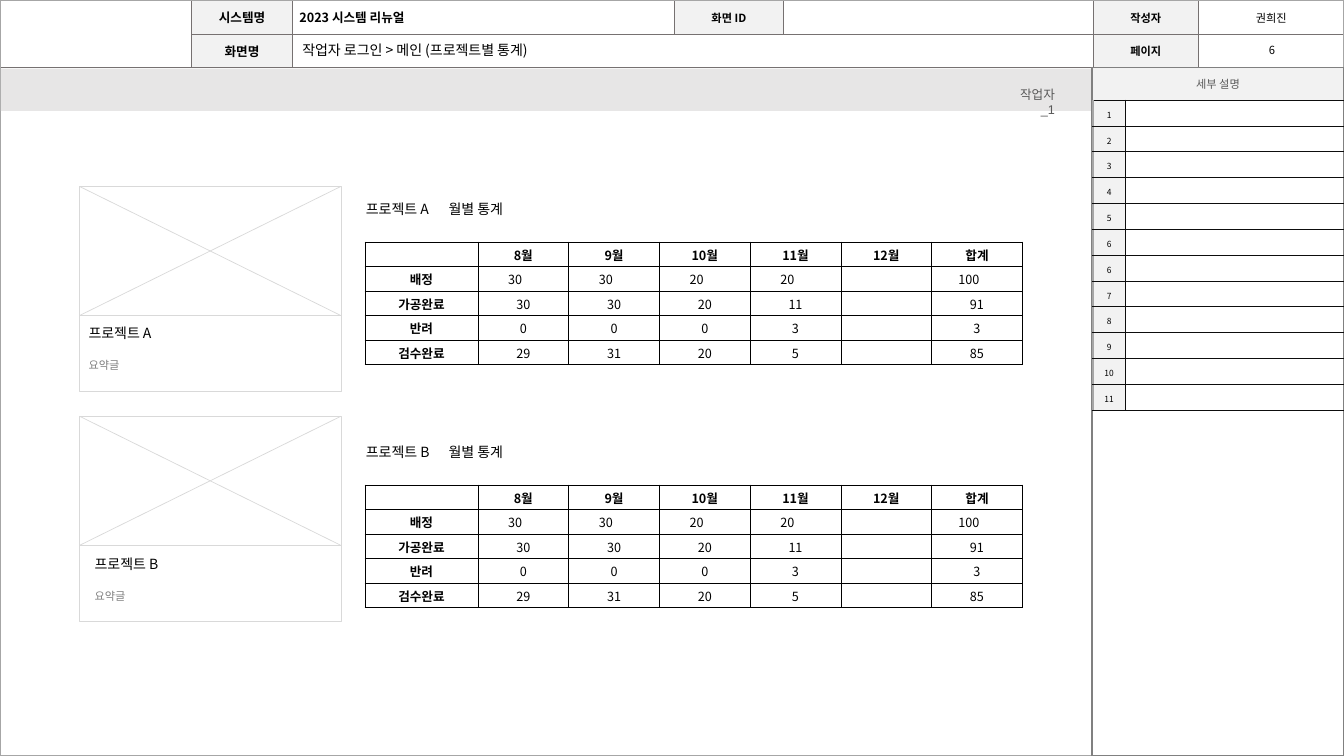
from lxml import etree
from pptx import Presentation
from pptx import util as u
from pptx.dml import color as dml
from pptx.enum import shapes, text
from pptx.oxml import ns

LEFT, CENTER, RIGHT = text.PP_ALIGN.LEFT, text.PP_ALIGN.CENTER, text.PP_ALIGN.RIGHT
MIDDLE, TOP = text.MSO_ANCHOR.MIDDLE, text.MSO_ANCHOR.TOP


def rgb(value):
    return dml.RGBColor.from_string(value)


def add_xml(parent, tag, **attributes):
    return etree.SubElement(parent, ns.qn(tag), attributes)


class Wireframe:
    font = "Noto Sans CJK KR"
    black, gray, label_fill, card_line = "000000", "808080", "F2F2F2", "D9D9D9"

    def __init__(self, slide):
        self.slide = slide

    def style(self, paragraph, size, color=black, bold=False, align=LEFT, spacing=1.0, latin=font):
        paragraph.alignment = align
        paragraph.line_spacing = spacing
        for run in paragraph.runs:
            run.font.size = u.Pt(size)
            run.font.bold = bold
            run.font.color.rgb = rgb(color)
            run.font.name = latin
            add_xml(run.font._element, "a:ea", typeface=self.font)
        if not paragraph.runs:
            paragraph._p.get_or_add_endParaRPr().set("sz", str(size * 100))

    def rectangle(self, left, top, width, height, fill=None, line=None, line_width=0.25):
        shape = self.slide.shapes.add_shape(
            shapes.MSO_SHAPE.RECTANGLE, *map(u.Inches, (left, top, width, height)))
        shape.shadow.inherit = False
        if fill:
            shape.fill.solid()
            shape.fill.fore_color.rgb = rgb(fill)
        else:
            shape.fill.background()
        if line:
            shape.line.color.rgb = rgb(line)
            shape.line.width = u.Pt(line_width)
        else:
            shape.line.fill.background()

    def line(self, x1, y1, x2, y2):
        connector = self.slide.shapes.add_connector(
            shapes.MSO_CONNECTOR.STRAIGHT, *map(u.Inches, (x1, y1, x2, y2)))
        connector.line.color.rgb = rgb(self.card_line)
        connector.line.width = u.Pt(0.5)
        add_xml(connector._element.spPr, "a:effectLst")

    def text_box(self, left, top, width, height, content, anchor=MIDDLE, margins=(0.1, 0.05, 0.1, 0.05)):
        frame = self.slide.shapes.add_textbox(
            *map(u.Inches, (left, top, width, height))).text_frame
        frame.word_wrap = True
        frame.vertical_anchor = anchor
        (frame.margin_left, frame.margin_top,
         frame.margin_right, frame.margin_bottom) = map(u.Inches, margins)
        frame.text = content
        return frame.paragraphs

    def table(self, left, top, columns, rows):
        table = self.slide.shapes.add_table(
            len(rows), len(columns), *map(u.Inches, (left, top, sum(columns), sum(rows)))).table
        table.first_row = table.horz_banding = False
        for column, width in zip(table.columns, columns):
            column.width = u.Inches(width)
        for row, height in zip(table.rows, rows):
            row.height = u.Inches(height)
        return table

    def cell(self, cell, content, size, borders, fill=None,
             margins=(0.05, 0.02, 0.05, 0.02), **style):
        (cell.margin_left, cell.margin_top,
         cell.margin_right, cell.margin_bottom) = map(u.Inches, margins)
        cell.vertical_anchor = MIDDLE
        cell.text = content
        self.style(cell.text_frame.paragraphs[0], size, **style)
        properties = cell._tc.get_or_add_tcPr()
        for side in "LRTB":
            color, width = borders.get(side, (None, 0))
            border = add_xml(properties, f"a:ln{side}", w=str(u.Pt(width)))
            if color:
                add_xml(add_xml(border, "a:solidFill"), "a:srgbClr", val=color)
            else:
                add_xml(border, "a:noFill")
        if fill:
            cell.fill.solid()
            cell.fill.fore_color.rgb = rgb(fill)
        else:
            cell.fill.background()

    def header(self):
        table = self.table(0, 0, [1.9, 1, 3.79, 1.08, 3.07, 1.05, 1.44], [0.34, 0.33])
        borders = dict.fromkeys("LRTB", ("767171", 0.5))
        rows = [["", "시스템명", "2023 시스템 리뉴얼", "화면 ID", "", "작성자", "권희진"],
                ["", "화면명", "", "", "", "페이지", ""]]
        for r, row in enumerate(rows):
            for c, content in enumerate(row):
                is_label = c in (1, 5) or (r, c) == (0, 3)
                is_title = c == 2
                self.cell(table.cell(r, c), content, 9 if c in (1, 2) else 8, borders,
                          fill=self.label_fill if is_label else None,
                          margins=(0.07 if is_title else 0.05, 0.02, 0.05, 0.02),
                          bold=is_label or is_title, align=LEFT if is_title else CENTER)
        table.cell(0, 0).merge(table.cell(1, 0))
        table.cell(1, 2).merge(table.cell(1, 4))

    def description_panel(self):
        table = self.table(10.83, 0.67, [2.5], [0.32, 6.51])
        edge = (self.gray, 1)
        self.cell(table.cell(0, 0), "세부 설명", 8, dict.fromkeys("LTR", edge),
                  fill=self.label_fill, color="595959", align=CENTER)
        self.cell(table.cell(1, 0), "", 8, dict.fromkeys("LRB", edge))

    def description_rows(self):
        numbers = [1, 2, 3, 4, 5, 6, 6, 7, 8, 9, 10, 11]
        table = self.table(10.84, 0.99, [0.32, 2.17], [3.08 / len(numbers)] * len(numbers))
        grid = dict.fromkeys("LRTB", ("0D0D0D", 0.25))
        margins = (0.09, 0.04, 0.09, 0.04)
        for r, number in enumerate(numbers):
            self.cell(table.cell(r, 0), str(number), 6, {**grid, "L": ("A6A6A6", 1)},
                      fill=self.label_fill, margins=margins, align=CENTER, spacing=1.3)
            self.cell(table.cell(r, 1), "", 6, grid, margins=margins)

    def project_card(self, top):
        left, right, divider = 0.79, 3.38, top + 1.28
        self.rectangle(left, top, right - left, 2.03, "FFFFFF", self.card_line)
        self.line(left, divider, right, divider)
        self.line(left, top, right, divider)
        self.line(right, top, left, divider)

    def project_caption(self, left, top, name):
        title, summary = self.text_box(left, top, 1.8, 0.71, f"프로젝트 {name}\n요약글")
        self.style(title, 10, spacing=0.9)
        self.style(summary, 8, color=self.gray, spacing=0.9)
        summary.space_before = u.Pt(13)

    def statistics(self, name, title_top, table_top):
        title = self.text_box(3.53, title_top, 6.28, 0.3, f"프로젝트 {name}\t월별 통계")[0]
        tabs = add_xml(title._p.get_or_add_pPr(), "a:tabLst")
        add_xml(tabs, "a:tab", pos=str(u.Inches(0.82)), algn="l")
        self.style(title, 10, spacing=0.9)
        rows = [["", "8월", "9월", "10월", "11월", "12월", "합계"],
                ["배정", "30", "30", "20", "20", "", "100"],
                ["가공완료", "30", "30", "20", "11", "", "91"],
                ["반려", "0", "0", "0", "3", "", "3"],
                ["검수완료", "29", "31", "20", "5", "", "85"]]
        table = self.table(3.62, table_top, [1.12] + [0.9] * 6, [1.22 / len(rows)] * len(rows))
        grid = dict.fromkeys("LRTB", (self.black, 0.5))
        for r, row in enumerate(rows):
            for c, content in enumerate(row):
                borders = {**grid, "R": (self.black, 1)} if c == 6 else grid
                right_margin = 0.17 if r == 1 and c else 0.01
                self.cell(table.cell(r, c), content, 9, borders, bold=r == 0 or c == 0,
                          margins=(0.01, 0.01, right_margin, 0), align=CENTER)


def main():
    presentation = Presentation()
    presentation.slide_width, presentation.slide_height = u.Inches(13.33), u.Inches(7.5)
    page = Wireframe(presentation.slides.add_slide(presentation.slide_layouts[6]))

    page.header()
    page.rectangle(0, 0, 13.33, 7.5, line="A6A6A6", line_width=1.3)
    number = page.text_box(12.48, 0.41, 0.27, 0.2, "6", TOP, (0.04, 0.02, 0.04, 0.02))[0]
    page.style(number, 8, align=CENTER)
    page.rectangle(0.01, 0.68, 10.82, 0.42, fill="E7E6E6")
    page.description_panel()

    screen = page.text_box(2.9, 0.36, 6.28, 0.3, "작업자 로그인 > 메인 (프로젝트별 통계)")[0]
    page.style(screen, 10, spacing=0.9)
    for top in (1.85, 4.13):
        page.project_card(top)
    page.description_rows()
    page.project_caption(0.78, 3.11, "A")
    page.project_caption(0.84, 5.4, "B")
    page.statistics("A", 1.93, 2.4)
    page.statistics("B", 4.34, 4.81)

    worker = page.text_box(9.85, 0.81, 0.71, 0.25, "작업자_1", TOP, (0.22, 0.05, 0.1, 0.05))[0]
    page.style(worker, 9, color="595959", align=RIGHT, latin="Arial")
    presentation.save("out.pptx")


if __name__ == "__main__":
    main()
